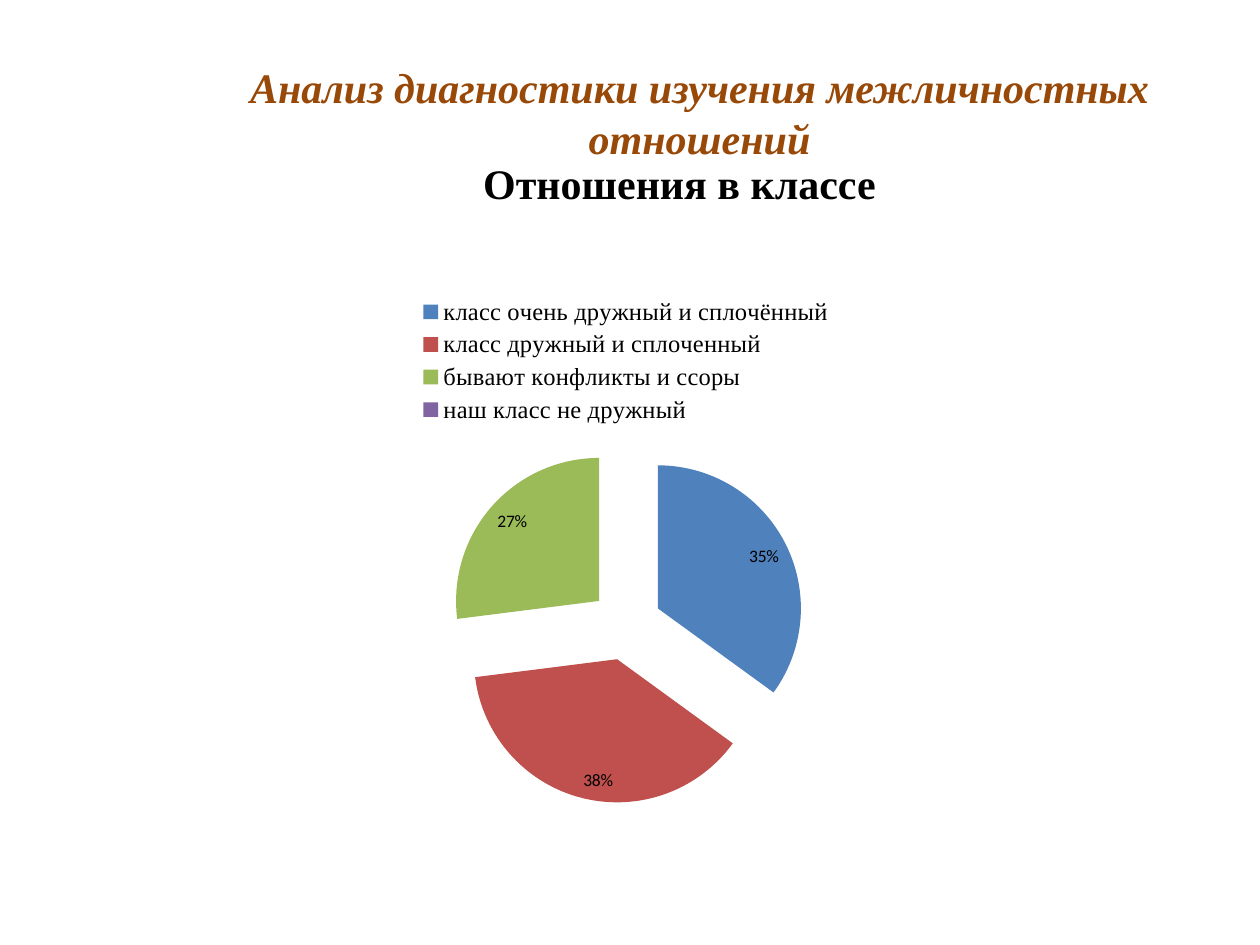
"""Build a slide with a pie chart of relationships in a school class."""
from pptx import Presentation, util as u
from pptx.chart.data import CategoryChartData
from pptx.dml.color import RGBColor
from pptx.enum import chart as ch, text

BLACK = RGBColor(0x00, 0x00, 0x00)
BROWN = RGBColor(0x98, 0x48, 0x07)
BLUE = RGBColor(0x4F, 0x81, 0xBD)
RED = RGBColor(0xC0, 0x50, 0x4D)
GREEN = RGBColor(0x9B, 0xBB, 0x59)
PURPLE = RGBColor(0x80, 0x64, 0xA2)
EMU_PER_PX = 914400 / 126


class SlideBuilder:
    serif = "Times New Roman"
    sans = "Calibri"

    def __init__(self, slide):
        self.slide = slide

    def box(self, *lengths):
        return [u.Emu(round(length * EMU_PER_PX)) for length in lengths]

    def heading(self, wording, left, top, width, height, color, italic=False):
        frame = self.slide.shapes.add_textbox(*self.box(left, top, width, height)).text_frame
        frame.word_wrap = True
        frame.margin_left = frame.margin_right = frame.margin_top = frame.margin_bottom = 0
        paragraph = frame.paragraphs[0]
        paragraph.text = wording
        paragraph.alignment = text.PP_ALIGN.CENTER
        font = paragraph.font
        font.name, font.size, font.color.rgb = self.serif, u.Pt(24), color
        font.bold, font.italic = True, italic

    def pie(self, answers, left, top, width, height):
        data = CategoryChartData()
        data.categories = [name for name, _, _ in answers]
        data.add_series("Отношения в классе", [value for _, value, _ in answers])
        chart = self.slide.shapes.add_chart(
            ch.XL_CHART_TYPE.PIE_EXPLODED, *self.box(left, top, width, height), data).chart
        chart.has_title = False
        chart.font.name, chart.font.size = self.sans, u.Pt(10)
        chart.font.color.rgb = BLACK

        chart.has_legend = True
        legend = chart.legend
        legend.position = ch.XL_LEGEND_POSITION.TOP
        legend.include_in_layout = False
        legend.font.name, legend.font.size = self.serif, u.Pt(14)
        legend.font.color.rgb = BLACK

        plot = chart.plots[0]
        plot.vary_by_categories = True
        for index, (_, _, color) in enumerate(answers):
            fill = plot.series[0].points[index].format.fill
            fill.solid()
            fill.fore_color.rgb = color

        plot.has_data_labels = True
        labels = plot.data_labels
        labels.show_percentage, labels.show_value = True, False
        labels.number_format, labels.number_format_is_linked = "0%;;", False
        labels.position = ch.XL_LABEL_POSITION.INSIDE_END


def main():
    presentation = Presentation()
    presentation.slide_width, presentation.slide_height = u.Inches(10), u.Inches(7.5)
    builder = SlideBuilder(presentation.slides.add_slide(presentation.slide_layouts[6]))
    builder.heading("Отношения в классе", 197, 158, 965, 50, BLACK)
    builder.heading("Анализ диагностики изучения межличностных отношений",
                    237, 62, 925, 102, BROWN, italic=True)
    builder.pie([
        ("класс очень дружный и сплочённый", 35, BLUE),
        ("класс дружный и сплоченный", 38, RED),
        ("бывают конфликты и ссоры", 27, GREEN),
        ("наш класс не дружный", 0, PURPLE),
    ], 315, 284, 622, 537)
    presentation.save("out.pptx")


if __name__ == "__main__":
    main()
